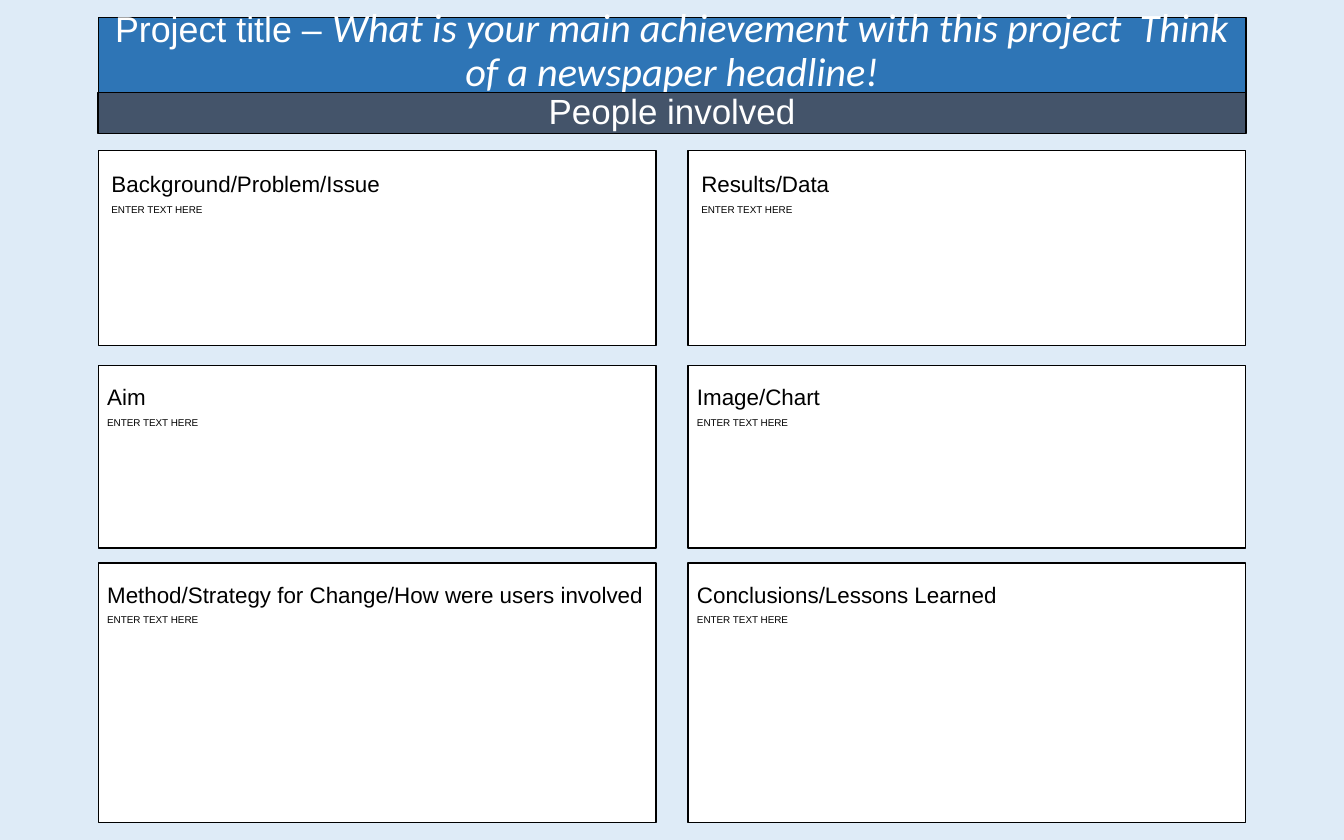
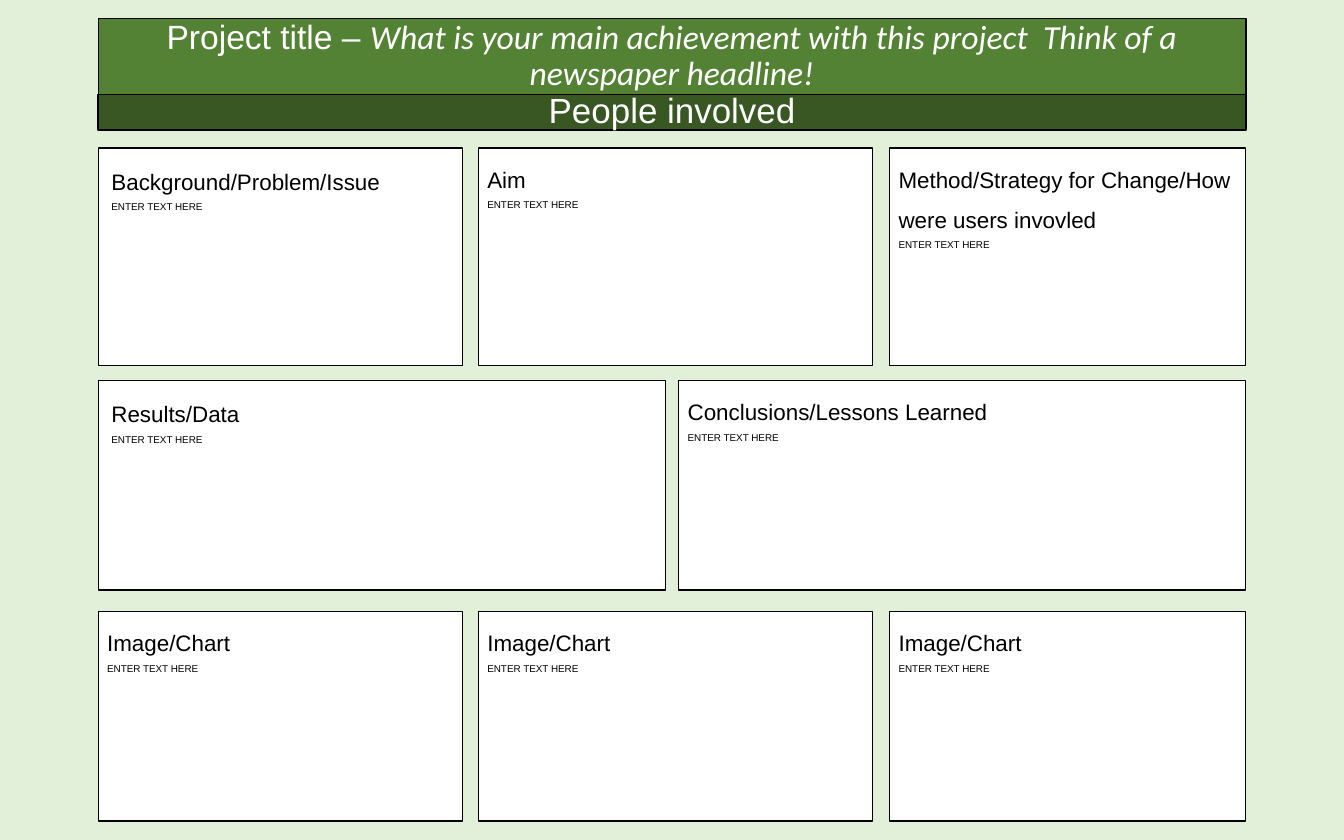
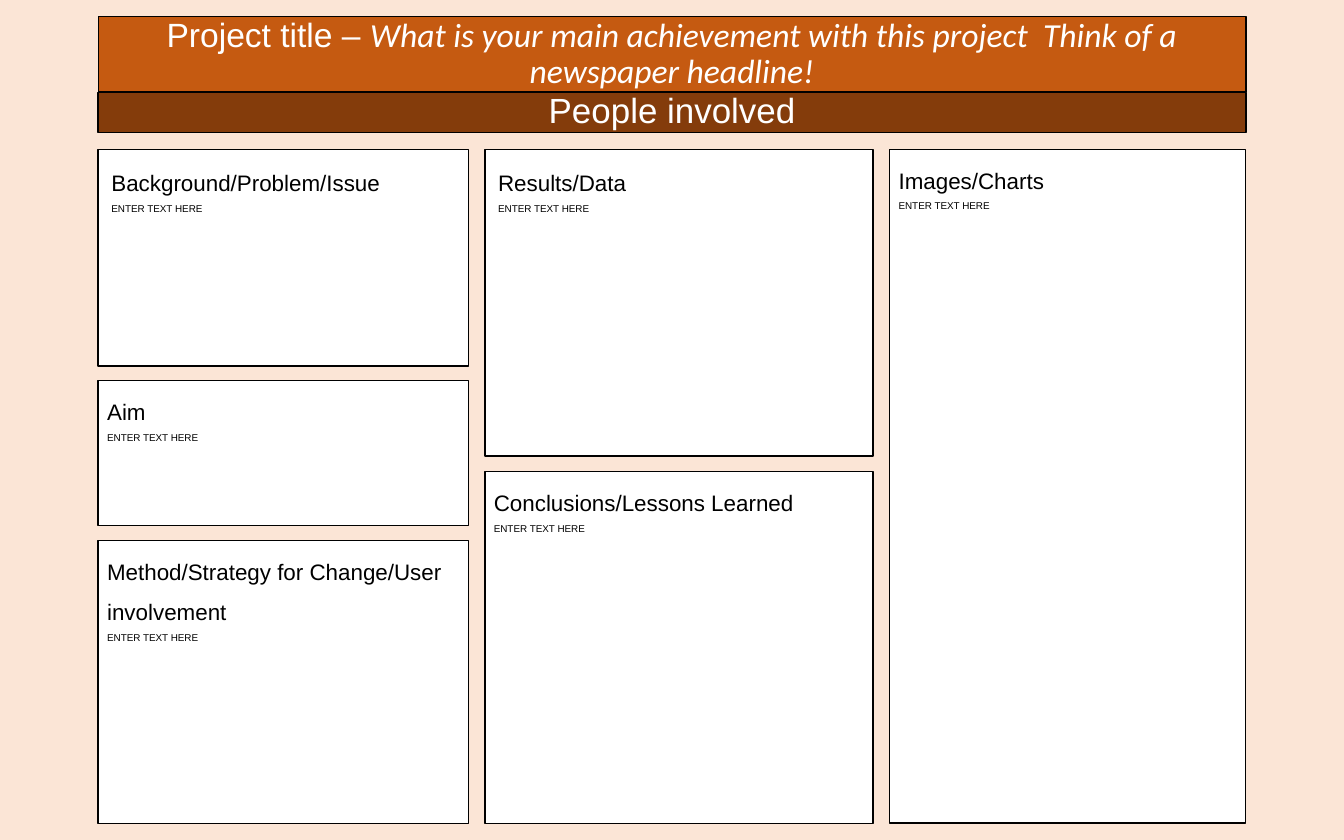
from dataclasses import dataclass
from typing import NamedTuple

from pptx import Presentation
from pptx.dml.color import RGBColor
from pptx.enum.shapes import MSO_SHAPE
from pptx.enum.text import MSO_ANCHOR, MSO_AUTO_SIZE, PP_ALIGN
from pptx.util import Pt

RECTANGLE = MSO_SHAPE.RECTANGLE
TOP, MIDDLE = MSO_ANCHOR.TOP, MSO_ANCHOR.MIDDLE
LEFT, CENTER = PP_ALIGN.LEFT, PP_ALIGN.CENTER
NO_AUTOFIT = MSO_AUTO_SIZE.NONE
TITLE_ONLY = 5

BLACK, WHITE = "000000", "FFFFFF"
HEADING_FONT, HEADLINE_FONT = "Arial", "Calibri"
TITLE_LABEL = "Project title – "
HEADLINE = "What is your main achievement with this project  Think of a newspaper headline!"


class Span(NamedTuple):
    start: float
    length: float


class Insets(NamedTuple):
    side: float
    top: float
    bottom: float


NARROW = Insets(4.8, 2.4, 2.4)
ROOMY = Insets(7.2, 3.6, 3.6)
FULL_WIDTH = Span(52.6, 614.9)


@dataclass(frozen=True)
class Panel:
    heading: str
    column: Span
    row: Span
    insets: Insets = NARROW


@dataclass(frozen=True)
class Poster:
    background: str
    title_fill: str
    people_fill: str
    title_row: Span
    people_row: Span
    panels: tuple[Panel, ...]
    label_size: float = 18
    headline_size: float = 18
    title_insets: Insets = ROOMY


def color(value: str) -> RGBColor:
    return RGBColor.from_string(value)


def add_text(paragraph, text: str, *, size: float, font: str = HEADING_FONT,
             ink: str = BLACK, italic: bool = False, align=LEFT,
             spacing: float = 1.5) -> None:
    paragraph.alignment = align
    paragraph.line_spacing = spacing
    paragraph.space_before = paragraph.space_after = Pt(0)
    run = paragraph.add_run()
    run.text = text
    run.font.name = font
    run.font.size = Pt(size)
    run.font.italic = italic
    run.font.color.rgb = color(ink)


def format_box(shape, column: Span, row: Span, fill: str, insets: Insets, anchor) -> None:
    shape.left, shape.width = Pt(column.start), Pt(column.length)
    shape.top, shape.height = Pt(row.start), Pt(row.length)
    shape.fill.solid()
    shape.fill.fore_color.rgb = color(fill)
    shape.line.color.rgb = color(BLACK)
    shape.line.width = Pt(0.75)
    frame = shape.text_frame
    frame.word_wrap = True
    frame.auto_size = NO_AUTOFIT
    frame.vertical_anchor = anchor
    frame.margin_left = frame.margin_right = Pt(insets.side)
    frame.margin_top, frame.margin_bottom = Pt(insets.top), Pt(insets.bottom)


def add_box(slide, column: Span, row: Span, fill: str, insets: Insets = NARROW, anchor=TOP):
    shape = slide.shapes.add_shape(RECTANGLE, 0, 0, 0, 0)
    shape.shadow.inherit = False
    format_box(shape, column, row, fill, insets, anchor)
    return shape.text_frame


def add_header(slide, poster: Poster) -> None:
    title = slide.shapes.title
    format_box(title, FULL_WIDTH, poster.title_row, poster.title_fill,
               poster.title_insets, MIDDLE)
    paragraph = title.text_frame.paragraphs[0]
    band_style = dict(ink=WHITE, align=CENTER, spacing=0.9)
    add_text(paragraph, TITLE_LABEL, size=poster.label_size, **band_style)
    add_text(paragraph, HEADLINE, size=poster.headline_size, font=HEADLINE_FONT,
             italic=True, **band_style)
    people = add_box(slide, FULL_WIDTH, poster.people_row, poster.people_fill, anchor=MIDDLE)
    add_text(people.paragraphs[0], "People involved", size=18.7, **band_style)


def add_panel(slide, panel: Panel) -> None:
    frame = add_box(slide, panel.column, panel.row, WHITE, panel.insets)
    add_text(frame.paragraphs[0], panel.heading, size=12)
    add_text(frame.add_paragraph(), "ENTER TEXT HERE", size=5.3)


def add_poster(presentation, poster: Poster) -> None:
    slide = presentation.slides.add_slide(presentation.slide_layouts[TITLE_ONLY])
    slide.background.fill.solid()
    slide.background.fill.fore_color.rgb = color(poster.background)
    add_header(slide, poster)
    for panel in poster.panels:
        add_panel(slide, panel)


def blue_poster() -> Poster:
    left, right = Span(52.6, 298.8), Span(368.6, 298.8)
    upper, middle, lower = Span(80.6, 104.4), Span(195.8, 97.9), Span(301.7, 139)
    return Poster(
        "DEEBF7", "2E75B6", "44546A", Span(9.2, 60.5), Span(49.6, 21.8),
        (
            Panel("Background/Problem/Issue", left, upper, ROOMY),
            Panel("Results/Data", right, upper, ROOMY),
            Panel("Aim", left, middle),
            Panel("Method/Strategy for Change/How were users involved", left, lower),
            Panel("Conclusions/Lessons Learned", right, lower),
            Panel("Image/Chart", right, middle),
        ),
        label_size=19.2, headline_size=21.6, title_insets=Insets(7.2, 3.6, 27.4),
    )


def green_poster() -> Poster:
    columns = Span(52.6, 195.1), Span(256.3, 211), Span(476.6, 190.8)
    left_half, right_half = Span(52.6, 303.8), Span(363.6, 303.8)
    upper, middle, lower = Span(79.2, 116.6), Span(203.8, 112.3), Span(327.6, 112.3)
    return Poster(
        "E2F0D9", "548235", "385723", Span(10, 40.8), Span(50.8, 19),
        (
            Panel("Background/Problem/Issue", columns[0], upper, ROOMY),
            Panel("Results/Data", left_half, middle, ROOMY),
            Panel("Aim", columns[1], upper),
            Panel("Method/Strategy for Change/How were users invovled", columns[2], upper),
            Panel("Conclusions/Lessons Learned", right_half, middle),
            *(Panel("Image/Chart", column, lower) for column in columns),
        ),
    )


def orange_poster() -> Poster:
    left, center, right = Span(52.6, 198.3), Span(259.8, 208), Span(476.6, 190.8)
    return Poster(
        "FBE5D6", "C55A11", "843C0B", Span(8.8, 40.6), Span(49.5, 21.4),
        (
            Panel("Background/Problem/Issue", left, Span(80, 116.2), ROOMY),
            Panel("Results/Data", center, Span(80, 164.4), ROOMY),
            Panel("Aim", left, Span(203.8, 77.6)),
            Panel("Method/Strategy for Change/User involvement", left, Span(289.4, 151.8)),
            Panel("Conclusions/Lessons Learned", center, Span(252.6, 188.6)),
            Panel("Images/Charts", right, Span(80, 361)),
        ),
    )


def main() -> None:
    presentation = Presentation()
    presentation.slide_width, presentation.slide_height = Pt(720), Pt(450)
    for poster in (blue_poster(), green_poster(), orange_poster()):
        add_poster(presentation, poster)
    presentation.save("out.pptx")


if __name__ == "__main__":
    main()
